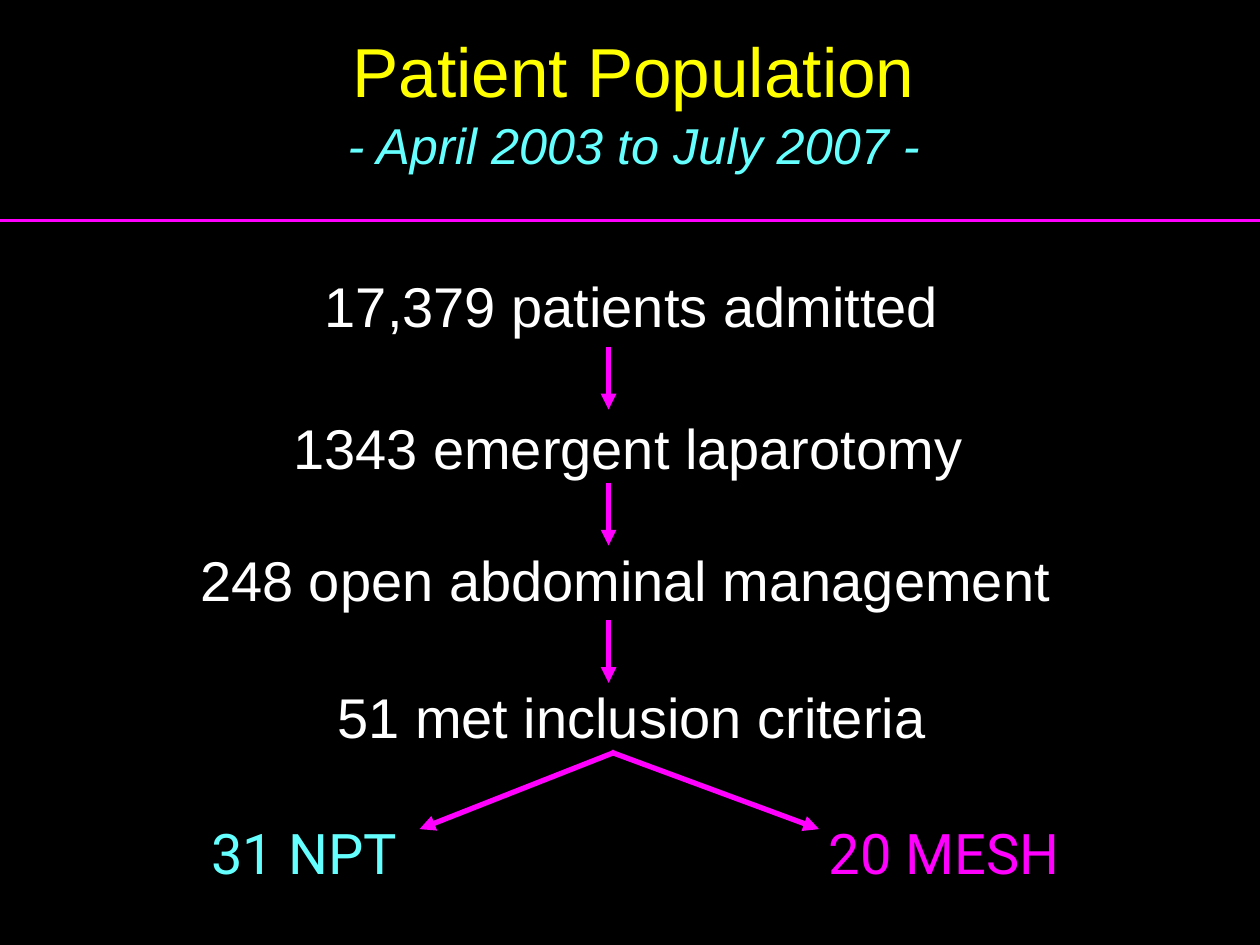
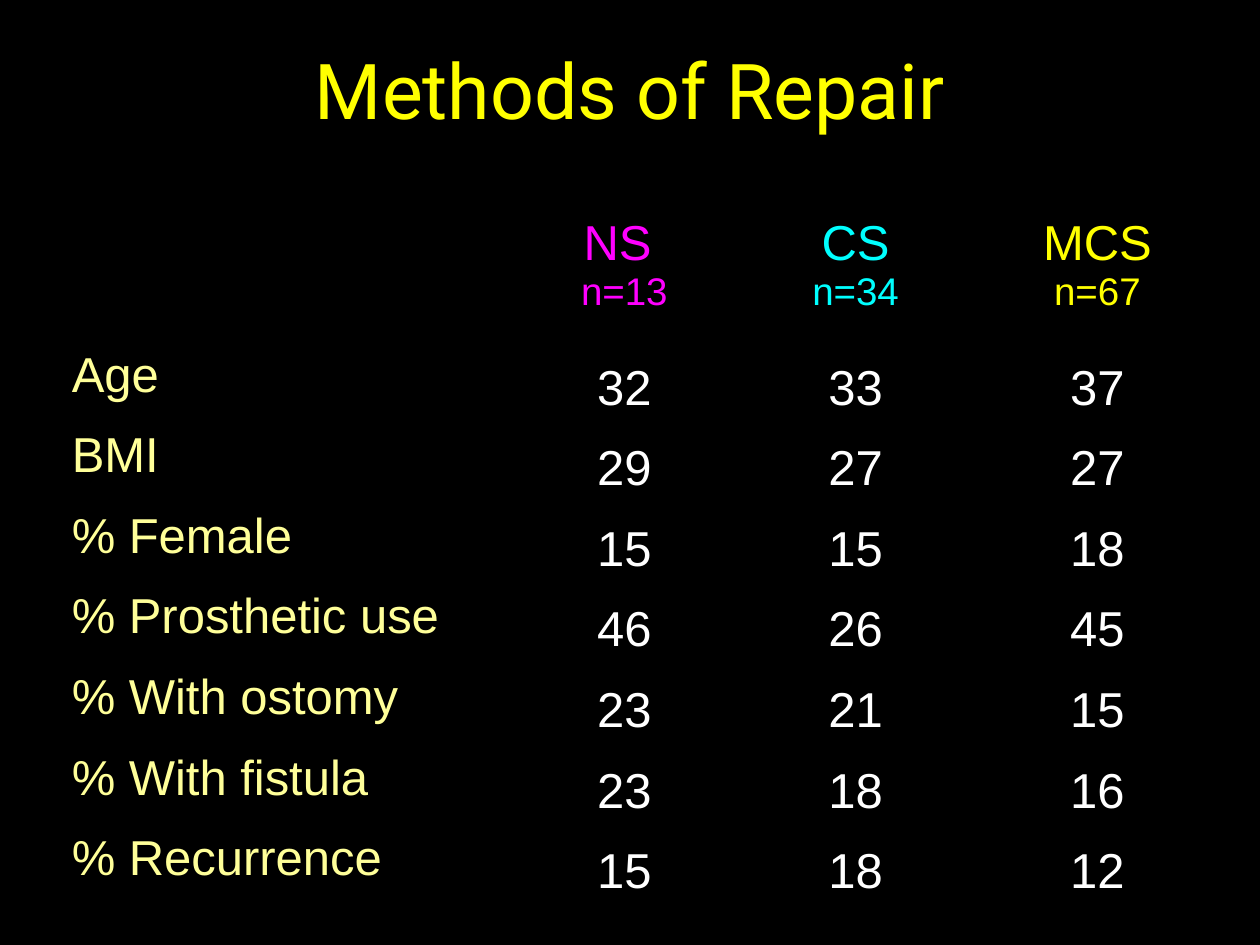
from dataclasses import dataclass
from typing import Any, NamedTuple

from lxml.etree import SubElement
from pptx import Presentation
from pptx.dml.color import RGBColor
from pptx.enum.shapes import MSO_CONNECTOR
from pptx.enum.text import MSO_ANCHOR, MSO_AUTO_SIZE, PP_ALIGN
from pptx.oxml.ns import qn
from pptx.util import Emu, Pt

PIXEL = 9144
BLACK, WHITE, YELLOW = "000000", "FFFFFF", "FFFF00"
PALE_YELLOW, MAGENTA = "FFFF99", "FF00FF"
CYAN, PALE_CYAN = "00FFFF", "66FFFF"
PLAIN_TABLE_STYLE = "{2D5ABB26-0587-4C30-8999-92F81FD0307C}"


class Area(NamedTuple):
    left: int
    top: int
    width: int
    height: int


class Point(NamedTuple):
    x: int
    y: int


@dataclass
class Span:
    text: str
    size: float
    color: str
    font: str = "Arial"
    italic: bool = False


@dataclass
class Label:
    area: Area
    span: Span
    align: Any = PP_ALIGN.CENTER
    line_spacing: float = 1.0


@dataclass
class Rule:
    start: Point
    end: Point
    width: float = 3
    arrow: bool = True


@dataclass
class Group:
    name: str
    count: str
    color: str


def px(length: int) -> Emu:
    return Emu(length * PIXEL)


def rgb(value: str) -> RGBColor:
    return RGBColor.from_string(value)


def apply(target: Any, values: dict[str, Any]) -> None:
    for name, value in values.items():
        setattr(target, name, value)


def add_span(para: Any, span: Span) -> None:
    run = para.add_run()
    run.text = span.text
    apply(run.font, {"name": span.font, "size": Pt(span.size), "italic": span.italic})
    run.font.color.rgb = rgb(span.color)


def add_page(deck: Any, area: Area, lines: list[Span], line_spacing: float = 1.0) -> Any:
    page = deck.slides.add_slide(deck.slide_layouts[5])
    title = page.shapes.title
    apply(title, dict(zip(Area._fields, map(px, area))))
    apply(title.text_frame, {
        "word_wrap": True,
        "auto_size": MSO_AUTO_SIZE.NONE,
        "vertical_anchor": MSO_ANCHOR.MIDDLE,
    })
    para = title.text_frame.paragraphs[0]
    apply(para, {"alignment": PP_ALIGN.CENTER, "line_spacing": line_spacing})
    for index, span in enumerate(lines):
        if index:
            para.add_line_break()
        add_span(para, span)
    return page


def add_label(page: Any, label: Label) -> None:
    box = page.shapes.add_textbox(*map(px, label.area))
    box.text_frame.word_wrap = True
    para = box.text_frame.paragraphs[0]
    apply(para, {"alignment": label.align, "line_spacing": label.line_spacing})
    add_span(para, label.span)


def add_rule(page: Any, rule: Rule) -> None:
    line = page.shapes.add_connector(
        MSO_CONNECTOR.STRAIGHT, *map(px, (*rule.start, *rule.end))
    )
    line.line.width = Pt(rule.width)
    line.line.color.rgb = rgb(MAGENTA)
    if rule.arrow:
        SubElement(line.line._get_or_add_ln(), qn("a:tailEnd"), type="triangle")
    SubElement(line._element.spPr, qn("a:effectLst"))


def fill_cell(cell: Any, spans: list[Span], align: Any, anchor: Any) -> None:
    cell.fill.background()
    apply(cell, {
        "margin_left": px(7), "margin_right": px(7),
        "margin_top": 0, "margin_bottom": 0,
        "vertical_anchor": anchor,
    })
    for index, span in enumerate(spans):
        frame = cell.text_frame
        para = frame.add_paragraph() if index else frame.paragraphs[0]
        para.alignment = align
        add_span(para, span)


def build_population(deck: Any) -> None:
    page = add_page(deck, Area(6, 8, 994, 142), [
        Span("Patient Population", 39.6, YELLOW),
        Span("- April 2003 to July 2007 -", 28.8, PALE_CYAN, italic=True),
    ], 1.05)
    add_rule(page, Rule(Point(0, 175), Point(1000, 175), 2.25, False))

    steps = [
        (Area(6, 217, 991, 60), "17,379 patients admitted", 0.9),
        (Area(5, 323, 987, 63), "1343 emergent laparotomy", 1.0),
        (Area(5, 428, 983, 63), "248 open abdominal management", 1.0),
        (Area(8, 537, 987, 63), "51 met inclusion criteria", 1.0),
    ]
    for area, text, spacing in steps:
        add_label(page, Label(area, Span(text, 32, WHITE), line_spacing=spacing))
    for top in (275, 383, 492):
        add_rule(page, Rule(Point(483, top), Point(483, top + 50)))

    add_rule(page, Rule(Point(488, 597), Point(333, 658)))
    add_rule(page, Rule(Point(485, 597), Point(650, 658)))
    arms = [
        (Area(158, 645, 176, 63), "31 NPT", PALE_CYAN),
        (Area(648, 645, 210, 63), "20 MESH", MAGENTA),
    ]
    for area, text, color in arms:
        add_label(page, Label(area, Span(text, 32, color, "Roboto"), PP_ALIGN.LEFT))


def build_repair(deck: Any) -> None:
    page = add_page(deck, Area(0, 8, 1000, 125), [
        Span("Methods of Repair", 44, YELLOW, "Roboto"),
    ])
    groups = [
        Group("NS ", "n=13", MAGENTA),
        Group("CS", "n=34", CYAN),
        Group("MCS", "n=67", YELLOW),
    ]
    measures = {
        "Age": (32, 33, 37),
        "BMI": (29, 27, 27),
        "% Female": (15, 15, 18),
        "% Prosthetic use": (46, 26, 45),
        "% With ostomy": (23, 21, 15),
        "% With fistula": (23, 18, 16),
        "% Recurrence": (15, 18, 12),
    }
    widths = (358, 175, 192, 192)
    heights = (131, *[64] * len(measures))
    frame = page.shapes.add_table(
        len(heights), len(widths), px(50), px(145), px(sum(widths)), px(sum(heights))
    )
    table = frame.table
    apply(table, {"first_row": False, "horz_banding": False})
    table._tbl.tblPr.find(qn("a:tableStyleId")).text = PLAIN_TABLE_STYLE
    for column, width in zip(table.columns, widths):
        column.width = px(width)
    for row, height in zip(table.rows, heights):
        row.height = px(height)

    fill_cell(table.cell(0, 0), [], PP_ALIGN.LEFT, MSO_ANCHOR.TOP)
    for column, group in enumerate(groups, 1):
        spans = [Span(group.name, 28, group.color), Span(group.count, 22, group.color)]
        fill_cell(table.cell(0, column), spans, PP_ALIGN.CENTER, MSO_ANCHOR.MIDDLE)
    for row, (measure, values) in enumerate(measures.items(), 1):
        name = Span(measure, 28, PALE_YELLOW)
        fill_cell(table.cell(row, 0), [name], PP_ALIGN.LEFT, MSO_ANCHOR.TOP)
        for column, value in enumerate(values, 1):
            number = Span(str(value), 28, WHITE)
            fill_cell(table.cell(row, column), [number], PP_ALIGN.CENTER, MSO_ANCHOR.MIDDLE)


def main() -> None:
    deck = Presentation()
    apply(deck, {"slide_width": px(1000), "slide_height": px(750)})
    backdrop = deck.slide_master.background.fill
    backdrop.solid()
    backdrop.fore_color.rgb = rgb(BLACK)
    build_population(deck)
    build_repair(deck)
    deck.save("out.pptx")


if __name__ == "__main__":
    main()
